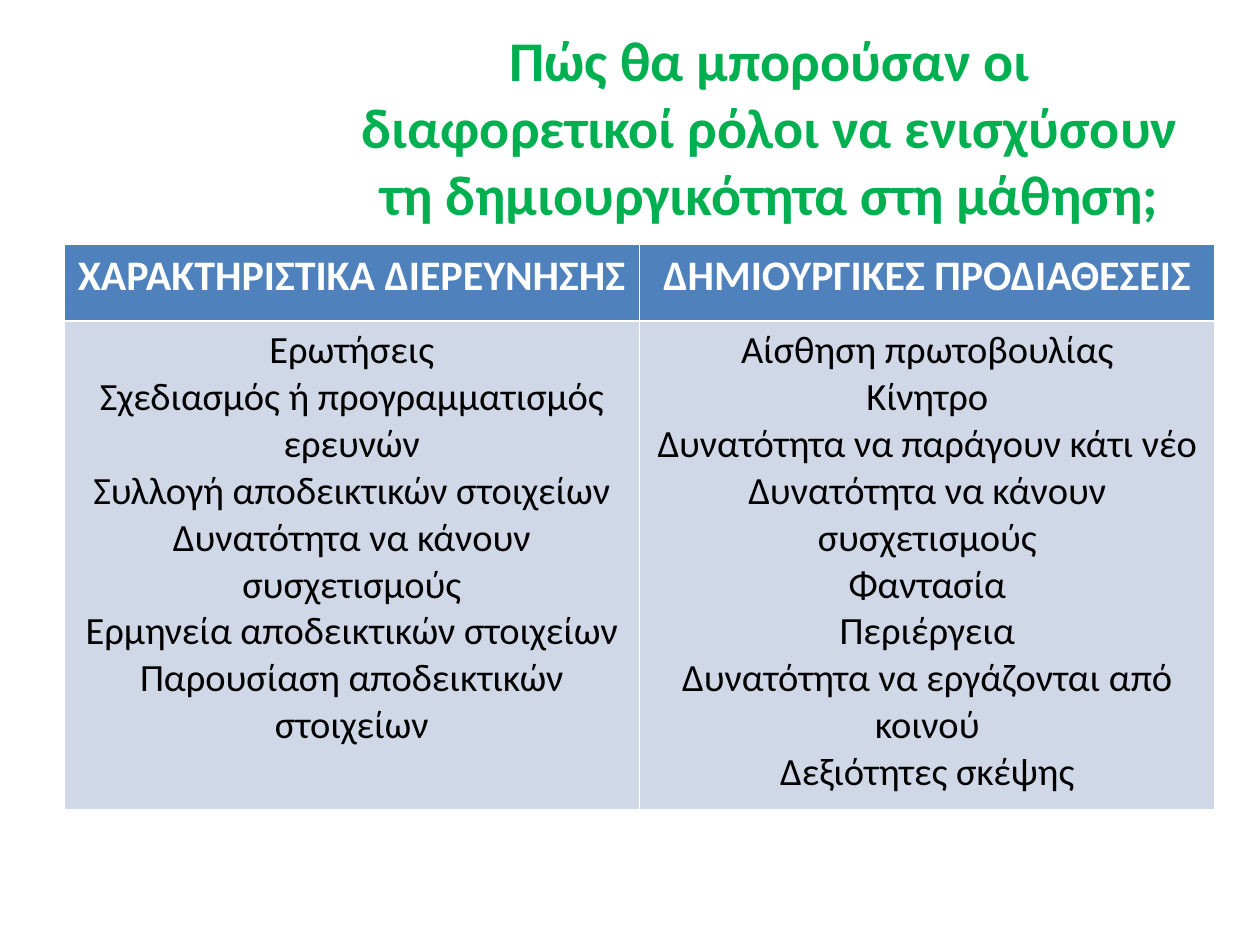
import pptx
import pptx.dml.color
import pptx.enum.text
import pptx.util

PX = 914400 / 126
FONT = "Calibri"
COLORS = {
    "title": "00B050",
    "header_fill": "4F81BD",
    "header_text": "FFFFFF",
    "body_fill": "D0D8E8",
    "body_text": "000000",
}
TITLE = "Πώς θα μπορούσαν οι διαφορετικοί ρόλοι να ενισχύσουν τη δημιουργικότητα στη μάθηση;"
COLUMNS = {
    "ΧΑΡΑΚΤΗΡΙΣΤΙΚΑ ΔΙΕΡΕΥΝΗΣΗΣ": [
        "Ερωτήσεις",
        "Σχεδιασμός ή προγραμματισμός ερευνών",
        "Συλλογή αποδεικτικών στοιχείων",
        "Δυνατότητα να κάνουν συσχετισμούς",
        "Ερμηνεία αποδεικτικών στοιχείων",
        "Παρουσίαση αποδεικτικών στοιχείων",
    ],
    "ΔΗΜΙΟΥΡΓΙΚΕΣ ΠΡΟΔΙΑΘΕΣΕΙΣ": [
        "Αίσθηση πρωτοβουλίας",
        "Κίνητρο",
        "Δυνατότητα να παράγουν κάτι νέο",
        "Δυνατότητα να κάνουν συσχετισμούς",
        "Φαντασία",
        "Περιέργεια",
        "Δυνατότητα να εργάζονται από κοινού",
        "Δεξιότητες σκέψης",
    ],
}


def px(n):
    return pptx.util.Emu(round(n * PX))


def rgb(name):
    return pptx.dml.color.RGBColor.from_string(COLORS[name])


def write(tf, lines, size, color, bold):
    tf.text = "\n".join(lines)
    for p in tf.paragraphs:
        p.alignment = pptx.enum.text.PP_ALIGN.CENTER
        p.font.name = FONT
        p.font.size = pptx.util.Pt(size)
        p.font.bold = bold
        p.font.color.rgb = rgb(color)


def add_title(s, x, y, w, h):
    sp = s.shapes.add_textbox(px(x), px(y), px(w), px(h))
    tf = sp.text_frame
    tf.word_wrap = True
    tf.vertical_anchor = pptx.enum.text.MSO_ANCHOR.MIDDLE
    write(tf, [TITLE], 32, "title", True)


def fill_cell(cell, lines, size, role, bold):
    cell.fill.solid()
    cell.fill.fore_color.rgb = rgb(role + "_fill")
    write(cell.text_frame, lines, size, role + "_text", bold)


def add_comparison(s, x, y, w, h, header_h):
    frame = s.shapes.add_table(2, len(COLUMNS), px(x), px(y), px(w), px(h))
    table = frame.table
    table.rows[0].height = px(header_h)
    table.rows[1].height = px(h - header_h)
    for i, (header, items) in enumerate(COLUMNS.items()):
        fill_cell(table.cell(0, i), [header], 24, "header", True)
        fill_cell(table.cell(1, i), items, 22, "body", False)


def main():
    prs = pptx.Presentation()
    prs.slide_width = px(1260)
    prs.slide_height = px(945)
    s = prs.slides.add_slide(prs.slide_layouts[6])
    add_title(s, 343, 38, 854, 176)
    add_comparison(s, 64, 244, 1151, 566, 77)
    prs.save("out.pptx")


if __name__ == "__main__":
    main()
